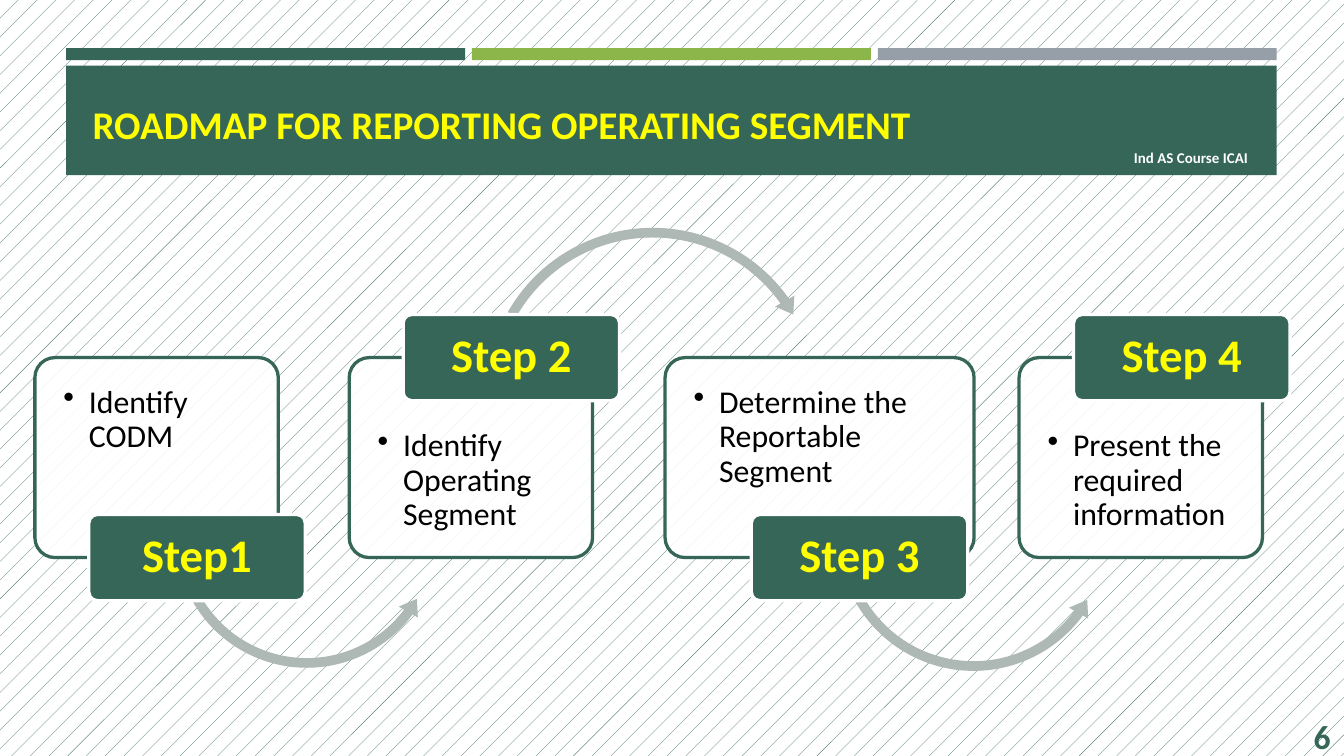
from dataclasses import dataclass

from lxml import etree
from pptx import Presentation
from pptx.dml.color import RGBColor
from pptx.enum.dml import MSO_PATTERN
from pptx.enum.shapes import MSO_SHAPE
from pptx.enum.text import MSO_ANCHOR, MSO_AUTO_SIZE, PP_ALIGN
from pptx.oxml.ns import qn
from pptx.util import Cm, Pt

RECTANGLE = MSO_SHAPE.RECTANGLE
ROUNDED = MSO_SHAPE.ROUNDED_RECTANGLE
ARC_ABOVE = MSO_SHAPE.CIRCULAR_ARROW
ARC_BELOW = MSO_SHAPE.LEFT_CIRCULAR_ARROW
DOTTED = MSO_PATTERN.PERCENT_5
TOP, MIDDLE = MSO_ANCHOR.TOP, MSO_ANCHOR.MIDDLE
NO_AUTOFIT = MSO_AUTO_SIZE.NONE
LEFT, CENTER = PP_ALIGN.LEFT, PP_ALIGN.CENTER
RIGHT, JUSTIFY = PP_ALIGN.RIGHT, PP_ALIGN.JUSTIFY


@dataclass(frozen=True)
class Theme:
    font: str = "Calibri"
    green: RGBColor = RGBColor(0x36, 0x66, 0x58)
    lime: RGBColor = RGBColor(0x8C, 0xB6, 0x4A)
    grey: RGBColor = RGBColor(0x96, 0x9F, 0xA7)
    arrow: RGBColor = RGBColor(0xAE, 0xB8, 0xB5)
    yellow: RGBColor = RGBColor(0xFF, 0xFF, 0x00)
    white: RGBColor = RGBColor(0xFF, 0xFF, 0xFF)
    black: RGBColor = RGBColor(0, 0, 0)
    title_size: int = 21
    step_size: int = 25
    body_size: int = 17
    number_size: int = 18
    course_size: int = 8
    outline: float = 1.75


@dataclass(frozen=True)
class Step:
    name: str
    task: str
    left: float
    width: float
    label_left: float
    raised: bool
    align: PP_ALIGN


THEME = Theme()
CARD_TOP, CARD_HEIGHT = 6.76, 3.78
LABEL_WIDTH, LABEL_HEIGHT = 4.09, 1.63

STEPS = [
    Step("Step1", "Identify CODM", 0.66, 4.6, 1.68, False, JUSTIFY),
    Step("Step 2", "Identify Operating Segment", 6.6, 4.6, 7.62, True, JUSTIFY),
    Step("Step 3", "Determine the Reportable Segment", 12.57, 5.84, 14.2, False, LEFT),
    Step("Step 4", "Present the required information", 19.26, 4.6, 20.29, True, LEFT),
]

ARROWS = [
    (ARC_BELOW, 3.2, 7.54, 5.2, (0.035, 4.28, 22.03, 90.24, 0.04)),
    (ARC_ABOVE, 9.07, 4.19, 6.53, (0.028, 3.36, 194.88, 125.76, 0.032)),
    (ARC_BELOW, 15.72, 7.44, 5.36, (0.034, 4.16, 21.92, 90.24, 0.039)),
]


def add_filled(slide, kind, left, top, width, height, fill, outline=None):
    shape = slide.shapes.add_shape(kind, Cm(left), Cm(top), Cm(width), Cm(height))
    shape.shadow.inherit = False
    shape.fill.solid()
    shape.fill.fore_color.rgb = fill
    if outline is None:
        shape.line.fill.background()
    else:
        shape.line.color.rgb = outline
        shape.line.width = Pt(THEME.outline)
    return shape


def write(shape, text, size, color, align, anchor=MIDDLE, bold=True,
          margins=(0.25, 0.13, 0.25, 0.13), spacing=None, bullet=False):
    frame = shape.text_frame
    frame.word_wrap = True
    frame.auto_size = NO_AUTOFIT
    frame.vertical_anchor = anchor
    (frame.margin_left, frame.margin_top,
     frame.margin_right, frame.margin_bottom) = map(Cm, margins)
    frame.text = text
    paragraph = frame.paragraphs[0]
    if bullet:
        add_bullet(paragraph)
    paragraph.alignment = align
    if spacing:
        paragraph.line_spacing = spacing
    paragraph.font.name = THEME.font
    paragraph.font.size = Pt(size)
    paragraph.font.bold = bold
    paragraph.font.color.rgb = color


def add_bullet(paragraph):
    properties = paragraph._p.get_or_add_pPr()
    properties.set("marL", str(Cm(0.48)))
    properties.set("indent", str(-Cm(0.48)))
    etree.SubElement(properties, qn("a:buChar")).set("char", "•")


def set_opacity(shape, percent):
    color = shape.fill._xPr.find(qn("a:solidFill"))[0]
    etree.SubElement(color, qn("a:alpha")).set("val", str(percent * 1000))


def add_header(slide):
    for column, color in enumerate((THEME.green, THEME.lime, THEME.grey)):
        add_filled(slide, RECTANGLE, 1.25 + column * 7.67, 0.91, 7.54, 0.23, color)
    band = add_filled(slide, RECTANGLE, 1.25, 1.24, 22.88, 2.07, THEME.green)
    course = add_filled(slide, RECTANGLE, 21.01, 2.84, 3, 0.28, THEME.green)
    write(course, "Ind AS Course ICAI", THEME.course_size, THEME.white, CENTER)

    title = slide.shapes.title
    title.left, title.top, title.width, title.height = map(Cm, (1.5, 1.4, 20.4, 1.9))
    write(title, "ROADMAP FOR REPORTING OPERATING SEGMENT",
          THEME.title_size, THEME.yellow, JUSTIFY)
    course._element.addnext(title._element)


def add_card(slide, step):
    card = add_filled(slide, ROUNDED, step.left, CARD_TOP, step.width, CARD_HEIGHT,
                      THEME.white, THEME.green)
    card.adjustments[0] = 0.1
    set_opacity(card, 90)
    top_margin = 1.25 if step.raised else 0.43
    write(card, step.task, THEME.body_size, THEME.black, step.align, anchor=TOP,
          bold=False, margins=(0.43, top_margin, 0.43, 0.43), spacing=0.9, bullet=True)


def add_label(slide, step):
    edge = CARD_TOP if step.raised else CARD_TOP + CARD_HEIGHT
    label = add_filled(slide, ROUNDED, step.label_left, edge - LABEL_HEIGHT / 2,
                       LABEL_WIDTH, LABEL_HEIGHT, THEME.green, THEME.white)
    label.adjustments[0] = 0.1
    write(label, step.name, THEME.step_size, THEME.yellow, CENTER,
          margins=(0.18, 0.13, 0.18, 0.13), spacing=0.9)


def add_arrow(slide, kind, left, top, size, bends):
    arrow = add_filled(slide, kind, left, top, size, size, THEME.arrow)
    for position, bend in enumerate(bends):
        arrow.adjustments[position] = bend


def add_page_number(slide):
    number = slide.shapes.add_textbox(Cm(23.27), Cm(13.54), Cm(2.13), Cm(0.76))
    write(number, "6", THEME.number_size, THEME.green, RIGHT)


def main():
    deck = Presentation()
    deck.slide_width, deck.slide_height = Cm(25.4), Cm(14.29)
    slide = deck.slides.add_slide(deck.slide_layouts[5])
    backdrop = slide.background.fill
    backdrop.patterned()
    backdrop.pattern = DOTTED
    backdrop.fore_color.rgb = THEME.green
    backdrop.back_color.rgb = THEME.white

    add_header(slide)
    for step in STEPS:
        add_card(slide, step)
    for arrow in ARROWS:
        add_arrow(slide, *arrow)
    for step in STEPS:
        add_label(slide, step)
    add_page_number(slide)
    deck.save("out.pptx")


if __name__ == "__main__":
    main()
